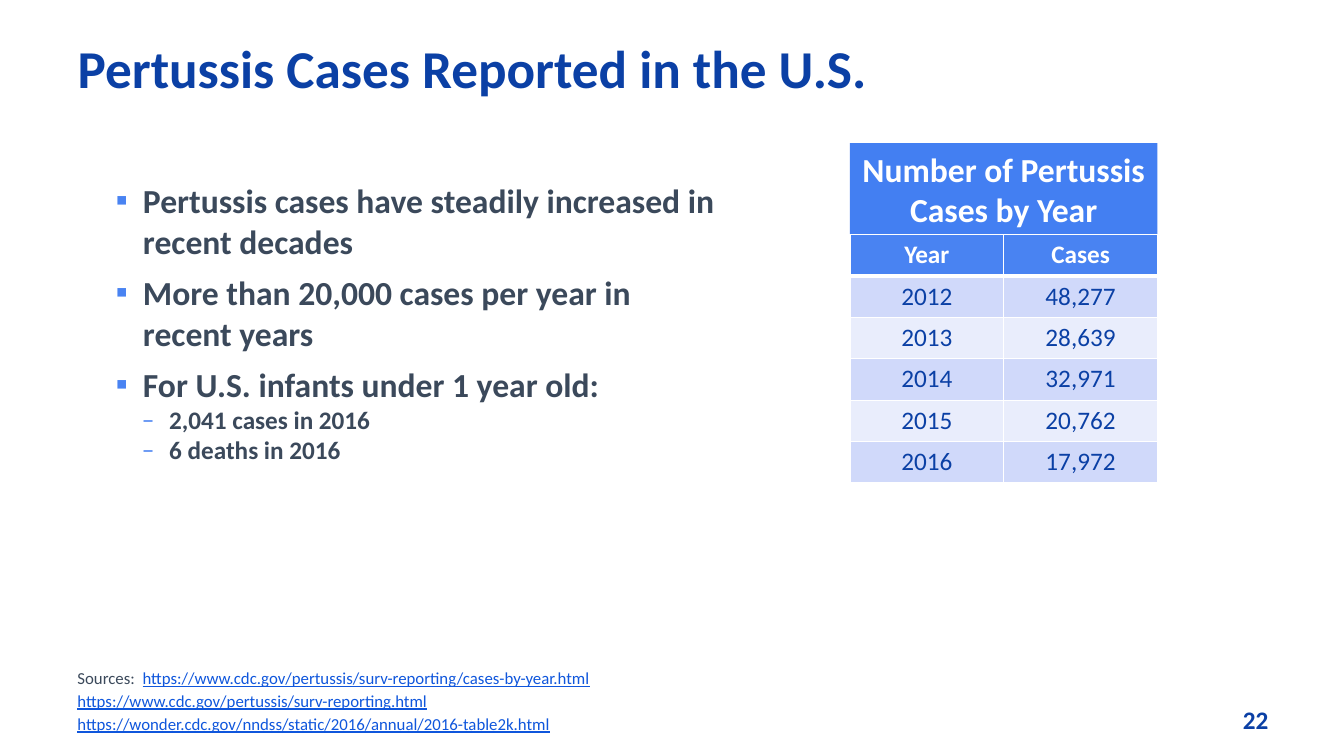
from lxml.etree import SubElement
from pptx import Presentation
from pptx.dml.color import RGBColor
from pptx.enum.shapes import MSO_SHAPE
from pptx.enum.text import MSO_ANCHOR, PP_ALIGN
from pptx.oxml.ns import qn
from pptx.util import Inches, Pt

FONT = "Calibri"
NAVY, SLATE, BLUE, LINK, WHITE = "0B40A5", "3B495B", "4983F2", "0F56DC", "FFFFFF"
BANNER, BAND_DARK, BAND_LIGHT = "437FF2", "D0D9FA", "E9EDFC"

BULLETS = [
    (0, "Pertussis cases have steadily increased in recent decades"),
    (0, "More than 20,000 cases per year in recent years"),
    (0, "For U.S. infants under 1 year old:"),
    (1, "2,041 cases in 2016"),
    (1, "6 deaths in 2016"),
]
CASES = [
    ("Year", "Cases"),
    ("2012", "48,277"),
    ("2013", "28,639"),
    ("2014", "32,971"),
    ("2015", "20,762"),
    ("2016", "17,972"),
]
SOURCES = [
    "https://www.cdc.gov/pertussis/surv-reporting/cases-by-year.html",
    "https://www.cdc.gov/pertussis/surv-reporting.html",
    "https://wonder.cdc.gov/nndss/static/2016/annual/2016-table2k.html",
]


def rgb(color):
    return RGBColor.from_string(color)


def add_run(paragraph, text, size, color, bold=False, underline=False):
    run = paragraph.add_run()
    run.text = text
    font = run.font
    font.name, font.size, font.bold = FONT, Pt(size), bold
    font.underline = underline
    font.color.rgb = rgb(color)


def add_text_frame(slide, left, top, width, height):
    box = slide.shapes.add_textbox(Inches(left), Inches(top), Inches(width), Inches(height))
    box.text_frame.word_wrap = True
    return box.text_frame


def next_paragraph(frame, index):
    return frame.add_paragraph() if index else frame.paragraphs[0]


def set_bullet(paragraph, symbol, indent):
    properties = paragraph._p.get_or_add_pPr()
    properties.set("marL", str(Inches(indent)))
    properties.set("indent", str(-Inches(0.27)))
    color = SubElement(properties, qn("a:buClr"))
    SubElement(color, qn("a:srgbClr"), val=BLUE)
    SubElement(properties, qn("a:buFont"), typeface=FONT)
    SubElement(properties, qn("a:buChar"), char=symbol)


def set_borders(cell, bottom):
    """Draw white cell borders; bottom is the lower line's width in points."""
    properties = cell._tc.get_or_add_tcPr()
    for position, (side, width) in enumerate(zip("LRTB", (1, 1, 1, bottom))):
        line = properties.makeelement(qn(f"a:ln{side}"), {"w": str(Pt(width))})
        fill = SubElement(line, qn("a:solidFill"))
        SubElement(fill, qn("a:srgbClr"), val=WHITE)
        properties.insert(position, line)


def add_title(slide, left, top, width, height):
    title = slide.shapes.title
    title.left, title.top = Inches(left), Inches(top)
    title.width, title.height = Inches(width), Inches(height)
    frame = title.text_frame
    frame.vertical_anchor = MSO_ANCHOR.TOP
    paragraph = frame.paragraphs[0]
    paragraph.alignment = PP_ALIGN.LEFT
    add_run(paragraph, "Pertussis Cases Reported in the U.S.", 38, NAVY, bold=True)


def add_bullets(slide, left, top, width, height):
    frame = add_text_frame(slide, left, top, width, height)
    for index, (level, text) in enumerate(BULLETS):
        paragraph = next_paragraph(frame, index)
        paragraph.level = level
        if index and level == 0:
            paragraph.space_before = Pt(8)
        set_bullet(paragraph, "▪–"[level], (0.27, 0.53)[level])
        add_run(paragraph, text, (24, 18)[level], SLATE, bold=True)


def add_cases_table(slide, left, top, width, banner_height, row_height):
    banner = slide.shapes.add_shape(
        MSO_SHAPE.RECTANGLE, Inches(left), Inches(top), Inches(width), Inches(banner_height))
    banner.shadow.inherit = False
    banner.fill.solid()
    banner.fill.fore_color.rgb = rgb(BANNER)
    banner.line.fill.background()
    banner.text_frame.word_wrap = True
    heading = banner.text_frame.paragraphs[0]
    heading.alignment = PP_ALIGN.CENTER
    add_run(heading, "Number of Pertussis Cases by Year", 24, WHITE, bold=True)

    table = slide.shapes.add_table(
        len(CASES), 2, Inches(left), Inches(top + banner_height),
        Inches(width), Inches(row_height * len(CASES))).table
    for row_index, row in enumerate(CASES):
        is_header = row_index == 0
        band = BAND_DARK if row_index % 2 else BAND_LIGHT
        for column_index, text in enumerate(row):
            cell = table.cell(row_index, column_index)
            cell.fill.solid()
            cell.fill.fore_color.rgb = rgb(BLUE if is_header else band)
            set_borders(cell, bottom=3 if is_header else 1)
            paragraph = cell.text_frame.paragraphs[0]
            paragraph.alignment = PP_ALIGN.CENTER
            add_run(paragraph, text, 18, WHITE if is_header else NAVY, bold=is_header)


def add_sources(slide, left, top, width, height):
    frame = add_text_frame(slide, left, top, width, height)
    frame.vertical_anchor = MSO_ANCHOR.BOTTOM
    for index, address in enumerate(SOURCES):
        paragraph = next_paragraph(frame, index)
        if index:
            paragraph.space_before = Pt(2)
        else:
            add_run(paragraph, "Sources:  ", 12, SLATE)
        add_run(paragraph, address, 12, LINK, underline=True)


def add_slide_number(slide, left, top, width, height):
    frame = add_text_frame(slide, left, top, width, height)
    add_run(frame.paragraphs[0], "22", 18, NAVY, bold=True)


def main():
    presentation = Presentation()
    presentation.slide_width, presentation.slide_height = Inches(13.33), Inches(7.5)
    slide = presentation.slides.add_slide(presentation.slide_layouts[5])
    add_title(slide, 0.67, 0.3, 12, 1.3)
    add_sources(slide, 0.67, 6.53, 12, 0.8)
    add_bullets(slide, 1.05, 1.74, 6.17, 5.05)
    add_slide_number(slide, 12.23, 6.94, 1, 0.4)
    add_cases_table(slide, 8.43, 1.42, 3.05, banner_height=0.91, row_height=0.41)
    presentation.save("out.pptx")


if __name__ == "__main__":
    main()
